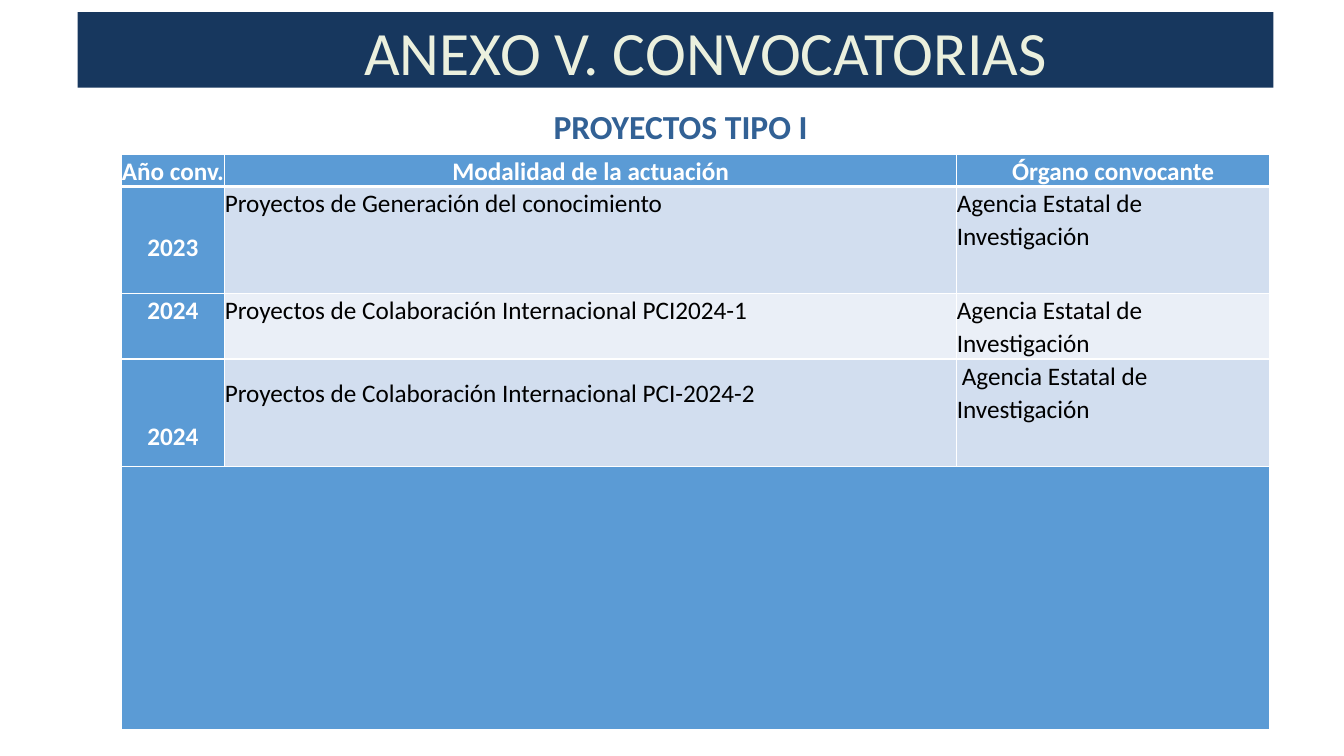
from lxml import etree
from pptx import Presentation
from pptx.dml.color import RGBColor
from pptx.enum.text import MSO_ANCHOR, MSO_AUTO_SIZE, PP_ALIGN
from pptx.oxml.ns import qn
from pptx.util import Inches, Pt

# Content
TITLE = "ANEXO V. CONVOCATORIAS"
SUBTITLE = "PROYECTOS TIPO I"
ROWS = [
    ("Año conv.", "Modalidad de la actuación", "Órgano convocante"),
    ("2023", "Proyectos de Generación del conocimiento", "Agencia Estatal de Investigación"),
    ("2024", "Proyectos de Colaboración Internacional PCI2024-1", "Agencia Estatal de Investigación"),
    ("2024", "Proyectos de Colaboración Internacional PCI-2024-2", "Agencia Estatal de Investigación"),
    ("", "", ""),
]
COL_WIDTHS = [1.03, 7.26, 3.1]
ROW_HEIGHTS = [0.32, 1.06, 0.65, 1.07, 2.61]
TOP_MARGINS = {(1, 0): 0.43, (3, 0): 0.6, (3, 1): 0.17}
FIRST_LINE_INDENTS = {(3, 2): 0.05}

FONT = "Calibri"
NAVY = RGBColor(0x17, 0x37, 0x5E)
CREAM = RGBColor(0xEB, 0xF0, 0xDE)
STEEL = RGBColor(0x32, 0x61, 0x95)
BLUE = RGBColor(0x5B, 0x9B, 0xD5)
BANDS = [RGBColor(0xEA, 0xEF, 0xF7), RGBColor(0xD2, 0xDE, 0xEF)]
WHITE = RGBColor(0xFF, 0xFF, 0xFF)
BLACK = RGBColor(0, 0, 0)


def style(p, size, color, bold=False, align=PP_ALIGN.CENTER):
    p.alignment = align
    p.font.name = FONT
    p.font.size = Pt(size)
    p.font.bold = bold
    p.font.color.rgb = color


def set_borders(cell, top, bottom):
    tc_pr = cell._tc.get_or_add_tcPr()
    for side, width in (("L", 1), ("R", 1), ("T", top), ("B", bottom)):
        ln = etree.SubElement(tc_pr, qn(f"a:ln{side}"), w=str(Pt(width)))
        fill = etree.SubElement(ln, qn("a:solidFill"))
        etree.SubElement(fill, qn("a:srgbClr"), val=str(WHITE))


prs = Presentation()
prs.slide_width, prs.slide_height = Inches(13.33), Inches(7.5)
s = prs.slides.add_slide(prs.slide_layouts[5])

# Title bar
title = s.shapes.title
title.left, title.top = Inches(0.77), Inches(0.12)
title.width, title.height = Inches(11.86), Inches(0.75)
title.fill.solid()
title.fill.fore_color.rgb = NAVY
tf = title.text_frame
tf.text = TITLE
tf.auto_size = MSO_AUTO_SIZE.NONE
tf.vertical_anchor = MSO_ANCHOR.MIDDLE
tf.margin_left = tf.margin_right = tf.margin_bottom = 0
tf.margin_top = Inches(0.01)
p = tf.paragraphs[0]
p._p.get_or_add_pPr().set("marL", str(Inches(0.6)))
style(p, 44, CREAM)

# Subtitle
tf = s.shapes.add_textbox(Inches(4.24), Inches(1), Inches(5.02), Inches(0.5)).text_frame
tf.word_wrap = True
tf.text = SUBTITLE
style(tf.paragraphs[0], 24, STEEL, bold=True)

# Table of calls
table = s.shapes.add_table(
    len(ROWS), len(COL_WIDTHS), Inches(1.2), Inches(1.53),
    Inches(sum(COL_WIDTHS)), Inches(sum(ROW_HEIGHTS))).table
for column, width in zip(table.columns, COL_WIDTHS):
    column.width = Inches(width)
for row, height in zip(table.rows, ROW_HEIGHTS):
    row.height = Inches(height)

last = len(ROWS) - 1
for i, texts in enumerate(ROWS):
    for j, text in enumerate(texts):
        cell = table.cell(i, j)
        heading = i in (0, last) or j == 0
        set_borders(cell, top=3 if i == 1 else 1, bottom=3 if i == 0 else 1)
        cell.fill.solid()
        cell.fill.fore_color.rgb = BLUE if heading else BANDS[i % 2]
        cell.margin_left = cell.margin_right = cell.margin_bottom = 0
        cell.margin_top = Inches(TOP_MARGINS.get((i, j), 0))
        cell.text = text
        p = cell.text_frame.paragraphs[0]
        p.line_spacing = 1.07
        if (i, j) in FIRST_LINE_INDENTS:
            p._p.get_or_add_pPr().set("indent", str(Inches(FIRST_LINE_INDENTS[i, j])))
        style(p, 18, WHITE if heading else BLACK, heading,
              PP_ALIGN.CENTER if heading else PP_ALIGN.LEFT)
table.cell(last, 0).merge(table.cell(last, len(COL_WIDTHS) - 1))

prs.save("out.pptx")
